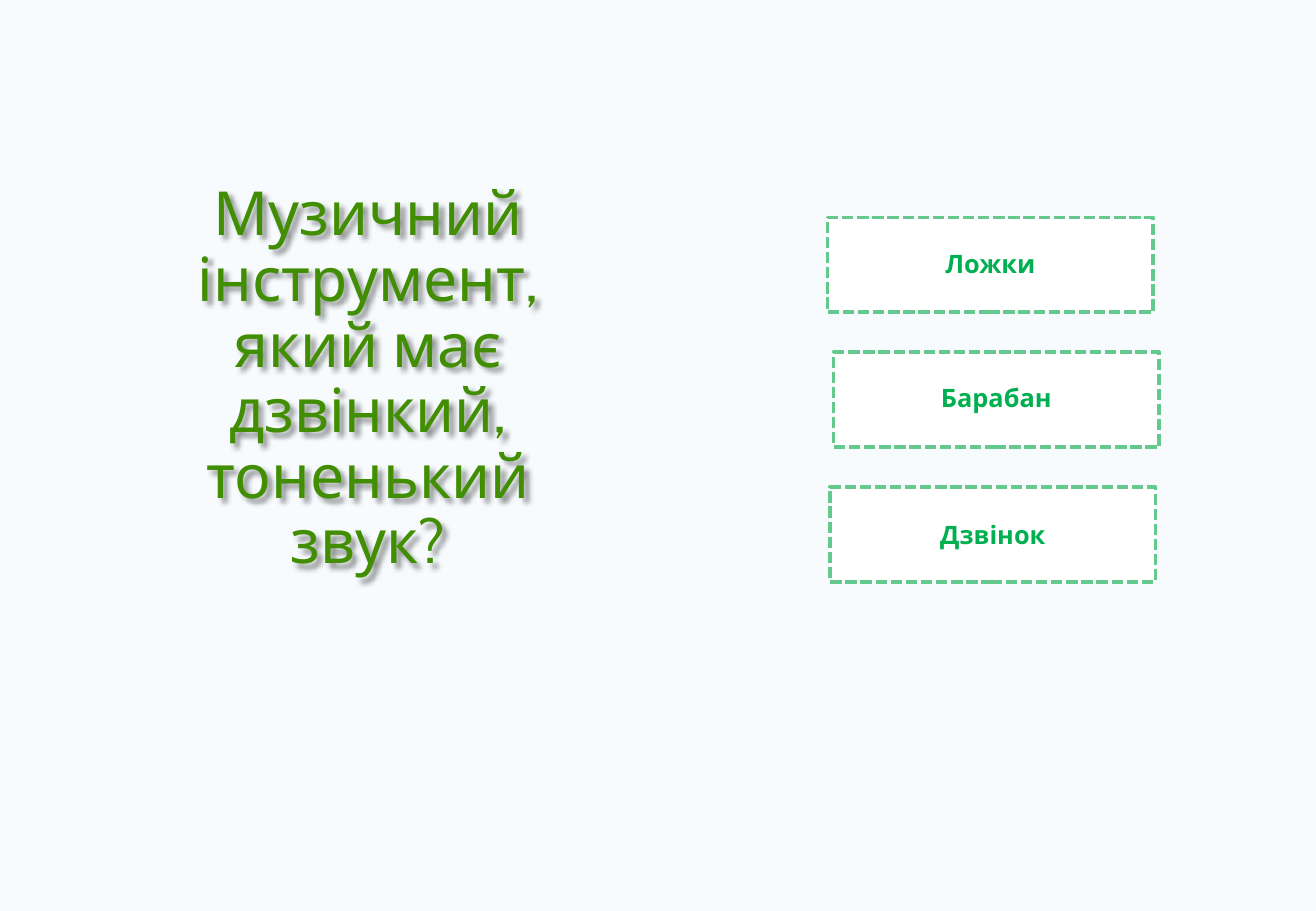
from lxml.etree import SubElement
from pptx import Presentation
from pptx.dml.color import RGBColor
from pptx.enum.dml import MSO_LINE
from pptx.enum.shapes import MSO_SHAPE
from pptx.enum.text import MSO_ANCHOR, PP_ALIGN
from pptx.oxml.ns import qn
from pptx.util import Pt

# Content: question, then answers as (text, left, line spacing)
QUESTION = "Музичний інструмент, який має дзвінкий, тоненький звук?"
ANSWERS = [("Ложки", 681, 0.9), ("Барабан", 686, 0.9), ("Дзвінок", 683, 1.0)]

# Layout in px, 100 px to the inch
PX = 9144
SLIDE = (1083, 750)
TITLE = (115, 179, 376, 268)
TOP, STEP, WIDE, HIGH = 179, 111, 268, 78

THEME = {
    "font": "Cabin",
    "back": "F7FBFD",
    "title": "418E03",
    "answer": "00B050",
    "fill": "FFFFFF",
    "line": "63C98C",
    "title_pt": 36,
    "answer_pt": 15,
    "line_pt": 2.25,
}


def color(key):
    return RGBColor.from_string(THEME[key])


def emu(*sizes):
    return [size * PX for size in sizes]


def write(shape, text, role, space, bold=False):
    frame = shape.text_frame
    frame.word_wrap = True
    frame.vertical_anchor = MSO_ANCHOR.MIDDLE
    para = frame.paragraphs[0]
    para.alignment = PP_ALIGN.CENTER
    para.line_spacing = space
    run = para.add_run()
    run.text = text
    run.font.name = THEME["font"]
    run.font.size = Pt(THEME[role + "_pt"])
    run.font.bold = bold
    run.font.color.rgb = color(role)


def add_glow(shape):
    """Give the unfilled box a soft shadow, which falls from its text."""
    effects = SubElement(shape.element.spPr, qn("a:effectLst"))
    shadow = SubElement(effects, qn("a:outerShdw"), blurRad="38100",
                        dist="38100", dir="2700000", algn="tl")
    black = SubElement(shadow, qn("a:srgbClr"), val="000000")
    SubElement(black, qn("a:alpha"), val="43000")


def main():
    deck = Presentation()
    deck.slide_width, deck.slide_height = emu(*SLIDE)
    slide = deck.slides.add_slide(deck.slide_layouts[6])
    back = slide.background.fill
    back.solid()
    back.fore_color.rgb = color("back")

    # Question
    title = slide.shapes.add_textbox(*emu(*TITLE))
    write(title, QUESTION, "title", 0.9)
    add_glow(title)

    # Answer boxes
    for row, (text, left, space) in enumerate(ANSWERS):
        spot = emu(left, TOP + row * STEP, WIDE, HIGH)
        box = slide.shapes.add_shape(MSO_SHAPE.RECTANGLE, *spot)
        box.shadow.inherit = False
        box.fill.solid()
        box.fill.fore_color.rgb = color("fill")
        box.line.color.rgb = color("line")
        box.line.width = Pt(THEME["line_pt"])
        box.line.dash_style = MSO_LINE.SQUARE_DOT
        write(box, text, "answer", space, bold=True)

    deck.save("out.pptx")


if __name__ == "__main__":
    main()
